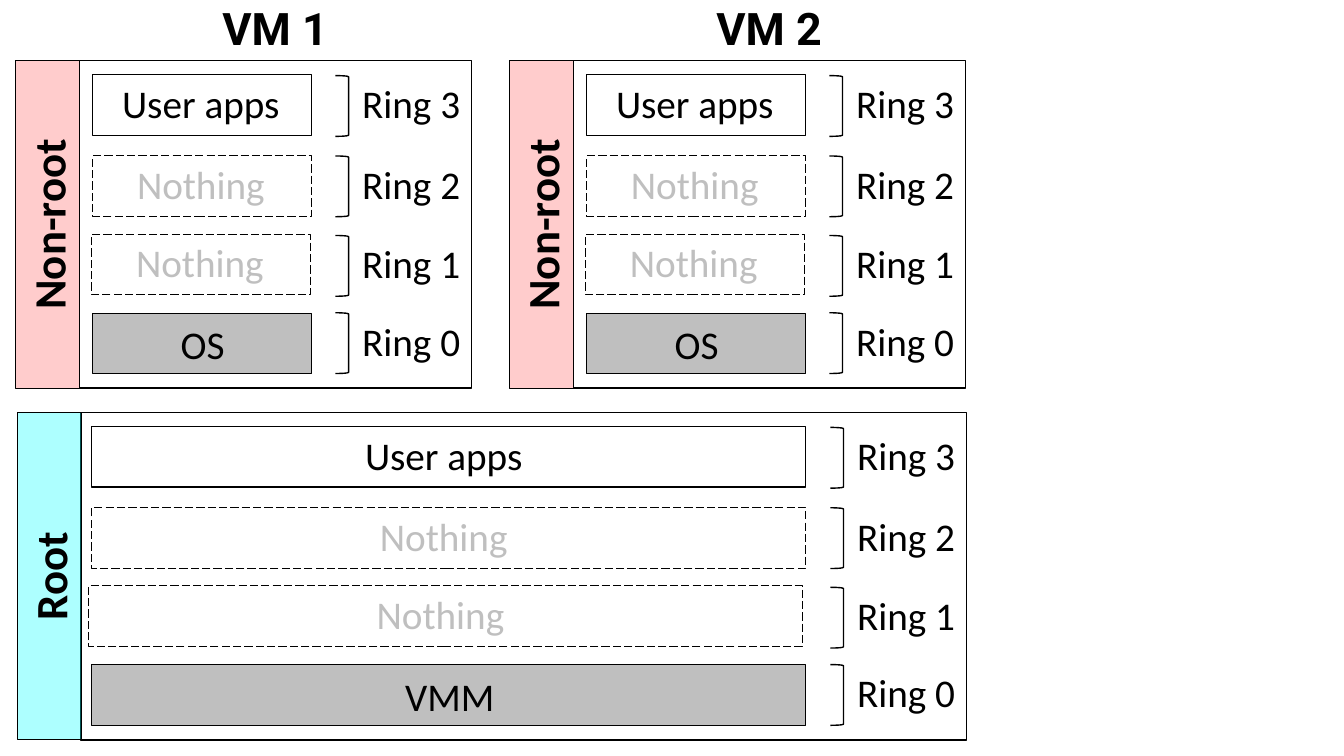
from collections import namedtuple

from lxml.etree import SubElement
from pptx import Presentation
from pptx.dml.color import RGBColor
from pptx.enum.dml import MSO_LINE
from pptx.enum.shapes import MSO_SHAPE
from pptx.enum.text import PP_ALIGN
from pptx.oxml.ns import qn
from pptx.util import Pt

Machine = namedtuple("Machine", "title mode kernel left top width box_left box_width")
Ring = namedtuple("Ring", "name label style box_top label_top bracket_top")

MACHINES = [
    Machine("", "Root", "VMM", 57.6, 294.5, 632.9, 8, 509.8),
    Machine("VM 2", "Non-root", "OS", 409, 43.2, 280.8, 10.2, 156.2),
    Machine("VM 1", "Non-root", "OS", 56.2, 43.2, 280.8, 10.2, 156.2),
]
RINGS = [
    Ring("Ring 3", "User apps", "used", 10, 9.7, 10.8),
    Ring("Ring 2", "Nothing", "empty", 68, 67.7, 68.2),
    Ring("Ring 1", "Nothing", "empty", 124, 123.6, 125),
    Ring("Ring 0", None, "kernel", 180.4, 182.2, 180.2),
]

THEME = {
    "black": "000000", "white": "FFFFFF", "grey": "BFBFBF",
    "Root": "00FFFF", "Non-root": "FFCCCC", "root_opacity": 32,
    "body_font": "Calibri", "title_font": "Roboto",
    "heading": 32, "body": 28, "thin": 0.75, "line": 1,
}
STYLES = {
    "used": {"fill": "white", "text": "black", "dash": None, "shift": 0, "inset": 0.018, "span": 0.95},
    "empty": {"fill": "white", "text": "grey", "dash": MSO_LINE.LONG_DASH, "shift": 0, "inset": 0.018, "span": 0.95},
    "kernel": {"fill": "grey", "text": "black", "dash": None, "shift": 0, "inset": 0.129, "span": 0.745},
}
RING_SHIFT = {"Ring 1": -0.0045}

PANEL_HEIGHT, BOX_HEIGHT = 234, 43.4
STRIP_WIDTH, STRIP_CENTER = 46, -22.2
BRACKET_WIDTH, BRACKET_FROM_RIGHT = 9.4, 97.4
NAME_WIDTH, NAME_HEIGHT, NAME_FROM_RIGHT = 95, 41.2, 85.4
TITLE_WIDTH, TITLE_TOP = 95, -46.1


def color(name):
    return RGBColor.from_string(THEME[name])


def write(shape, text, size="body", font="body_font", text_color="black", bold=False, align=PP_ALIGN.CENTER):
    shape.text_frame.word_wrap = True
    paragraph = shape.text_frame.paragraphs[0]
    paragraph.alignment = align
    run = paragraph.add_run()
    run.text = text
    run.font.color.rgb = color(text_color)
    for name, value in {"size": Pt(THEME[size]), "name": THEME[font], "bold": bold}.items():
        setattr(run.font, name, value)


def add_outlined(slide, kind, frame, fill=None, line="thin", dash=None):
    shape = slide.shapes.add_shape(kind, *map(Pt, frame))
    shape.shadow.inherit = False
    if fill:
        shape.fill.solid()
        shape.fill.fore_color.rgb = color(fill)
    else:
        shape.fill.background()
    shape.line.color.rgb = color("black")
    shape.line.width = Pt(THEME[line])
    if dash:
        shape.line.dash_style = dash
    return shape


def add_label(slide, frame, text, **text_format):
    write(slide.shapes.add_textbox(*map(Pt, frame)), text, **text_format)


def add_mode_strip(slide, machine):
    """Add the upright strip at the panel's left edge that names its CPU mode."""
    left = machine.left + STRIP_CENTER - PANEL_HEIGHT / 2
    top = machine.top + (PANEL_HEIGHT - STRIP_WIDTH) / 2
    strip = add_outlined(slide, MSO_SHAPE.RECTANGLE, (left, top, PANEL_HEIGHT, STRIP_WIDTH), machine.mode)
    strip.rotation = 270
    write(strip, machine.mode, size="heading", bold=True)
    if machine.mode == "Root":
        fill_color = strip.fill._xPr.find(qn("a:solidFill"))[0]
        SubElement(fill_color, qn("a:alpha"), val=str(THEME["root_opacity"] * 1000))


def add_ring(slide, machine, ring):
    style = STYLES[ring.style]
    width, right = machine.box_width, machine.left + machine.width
    box_left = machine.left + machine.box_left + width * RING_SHIFT.get(ring.name, 0)
    add_outlined(slide, MSO_SHAPE.RECTANGLE, (box_left, machine.top + ring.box_top, width, BOX_HEIGHT),
                 style["fill"], dash=style["dash"])
    label_frame = (box_left + width * style["inset"], machine.top + ring.label_top,
                   width * style["span"], NAME_HEIGHT)
    add_label(slide, label_frame, ring.label or machine.kernel, text_color=style["text"])

    bracket_top = machine.top + ring.bracket_top
    add_outlined(slide, MSO_SHAPE.RIGHT_BRACKET,
                 (right - BRACKET_FROM_RIGHT, bracket_top, BRACKET_WIDTH, BOX_HEIGHT), line="line")
    add_label(slide, (right - NAME_FROM_RIGHT, bracket_top - 0.6, NAME_WIDTH, NAME_HEIGHT),
              ring.name, align=PP_ALIGN.LEFT)


def add_machine(slide, machine):
    add_outlined(slide, MSO_SHAPE.RECTANGLE,
                 (machine.left, machine.top, machine.width, PANEL_HEIGHT), "white", "line")
    add_mode_strip(slide, machine)
    for ring in RINGS:
        add_ring(slide, machine, ring)
    if machine.title:
        title_left = machine.left + (machine.width - TITLE_WIDTH) / 2
        add_label(slide, (title_left, machine.top + TITLE_TOP, TITLE_WIDTH, STRIP_WIDTH),
                  machine.title, size="heading", font="title_font", bold=True)


def main():
    presentation = Presentation()
    presentation.slide_width, presentation.slide_height = Pt(960), Pt(540)
    slide = presentation.slides.add_slide(presentation.slide_layouts[6])
    for machine in MACHINES:
        add_machine(slide, machine)
    presentation.save("out.pptx")


if __name__ == "__main__":
    main()
